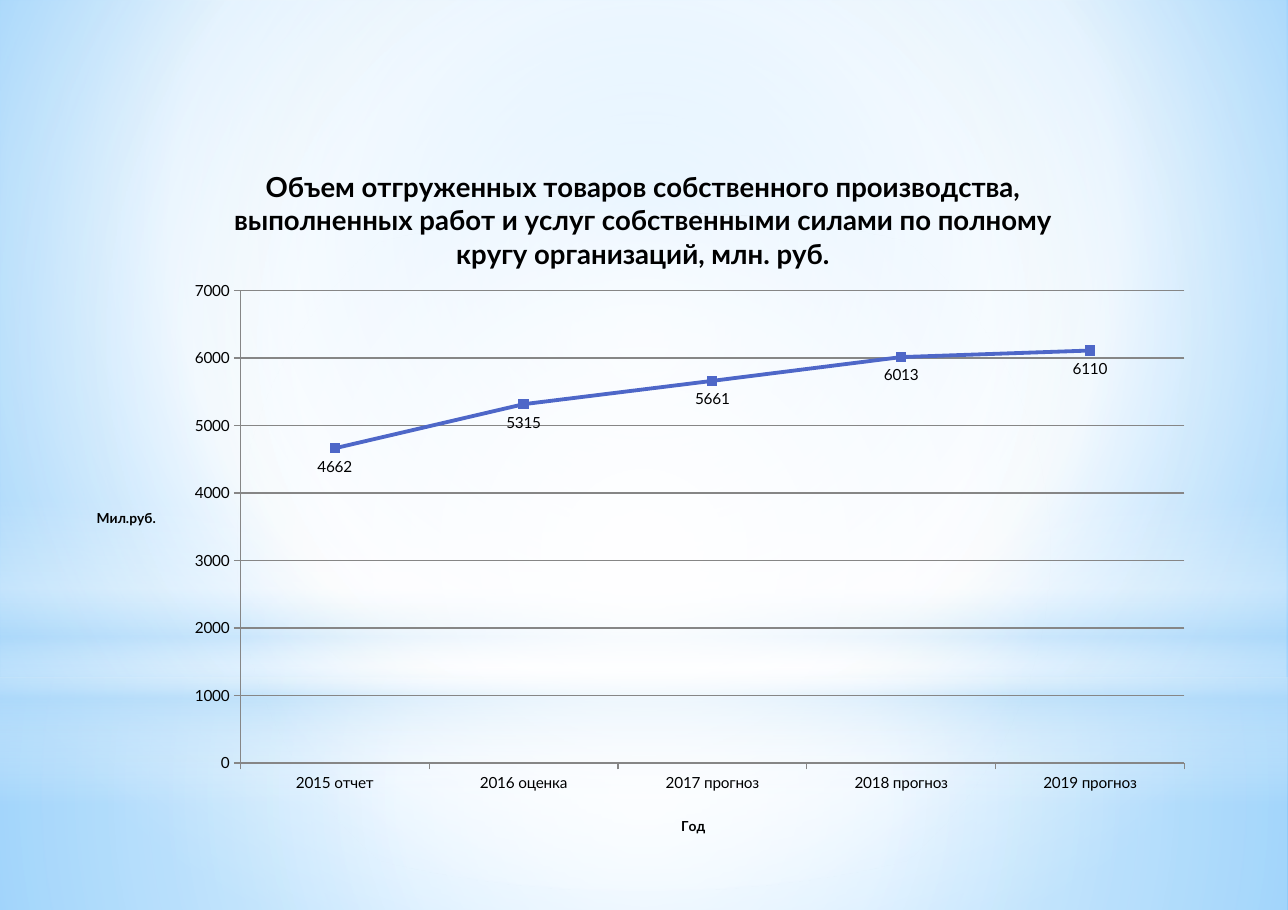
from dataclasses import dataclass

from lxml.etree import SubElement
from pptx import Presentation
from pptx.chart.data import CategoryChartData
from pptx.dml.color import RGBColor
from pptx.enum.chart import XL_CHART_TYPE, XL_LABEL_POSITION, XL_MARKER_STYLE, XL_TICK_MARK
from pptx.enum.shapes import MSO_SHAPE
from pptx.oxml import parse_xml
from pptx.oxml.ns import nsdecls, qn
from pptx.util import Emu, Pt

PX = 8298  # EMU per px
WIDTH, HEIGHT = 1288, 910
FONT = "Lato"
BLACK, BLUE, GREY = "000000", "4E67C8", "868686"
WHITE, PALE = "FFFFFF", "B4DCFA"


@dataclass
class Stop:
    pos: int
    color: str
    alpha: int = 100


@dataclass
class Gradient:
    stops: list[Stop]
    center: tuple[int, int, int, int] | None = (50, 50, 50, 50)  # None: top to bottom


@dataclass
class Glow:
    shape: MSO_SHAPE
    top: int
    height: int
    gradient: Gradient


BACKGROUND = Gradient([Stop(0, "9ED5FF"), Stop(60, WHITE), Stop(100, "5BB9FF")], (20, 10, 20, 60))
GLOWS = [
    Glow(MSO_SHAPE.RECTANGLE, 678, 232,
         Gradient([Stop(0, WHITE, 91), Stop(37, WHITE, 76), Stop(100, PALE, 79)])),
    Glow(MSO_SHAPE.RECTANGLE, 0, 678,
         Gradient([Stop(0, WHITE, 89), Stop(48, WHITE, 62), Stop(100, PALE, 79)])),
    Glow(MSO_SHAPE.RECTANGLE, 500, 303,
         Gradient([Stop(0, WHITE, 0), Stop(29, WHITE, 30), Stop(45, PALE, 40),
                   Stop(55, WHITE, 26), Stop(65, PALE, 60), Stop(100, WHITE, 0)], None)),
    Glow(MSO_SHAPE.OVAL, 213, 678, Gradient([Stop(0, WHITE), Stop(56, WHITE, 0)])),
]
VOLUMES = {
    "2015 отчет": 4662,
    "2016 оценка": 5315,
    "2017 прогноз": 5661,
    "2018 прогноз": 6013,
    "2019 прогноз": 6110,
}
TITLE = ("Объем отгруженных товаров собственного производства, выполненных работ "
         "и услуг собственными силами по полному кругу организаций, млн. руб.")


def px(n: int) -> Emu:
    return Emu(n * PX)


def rgb(color: str) -> RGBColor:
    return RGBColor.from_string(color)


def apply_gradient(parent, gradient: Gradient) -> None:
    """Put a gradient in the place of the solid fill of parent."""
    stops = "".join(
        f'<a:gs pos="{st.pos * 1000}"><a:srgbClr val="{st.color}">'
        f'<a:alpha val="{st.alpha * 1000}"/></a:srgbClr></a:gs>' for st in gradient.stops)
    if gradient.center:
        sides = " ".join(f'{k}="{v * 1000}"' for k, v in zip("ltrb", gradient.center))
        course = f'<a:path path="circle"><a:fillToRect {sides}/></a:path>'
    else:
        course = '<a:lin ang="5400000" scaled="0"/>'
    solid = parent.find(qn("a:solidFill"))
    parent.replace(solid, parse_xml(
        f'<a:gradFill {nsdecls("a")} rotWithShape="1"><a:gsLst>{stops}</a:gsLst>{course}</a:gradFill>'))


def add_glow(s, glow: Glow) -> None:
    sp = s.shapes.add_shape(glow.shape, 0, px(glow.top), px(WIDTH), px(glow.height))
    sp.shadow.inherit = False
    sp.line.fill.background()
    sp.fill.solid()
    apply_gradient(sp.element.spPr, glow.gradient)


def set_layout(element, **values: float | str) -> None:
    """Fix the place of a chart part, as fractions of the chart."""
    layout = element.find(qn("c:layout"))
    if layout is None:
        layout = parse_xml(f'<c:layout {nsdecls("c")}/>')
        element.insert(0, layout)
    manual = SubElement(layout, qn("c:manualLayout"))
    for name, value in values.items():
        SubElement(manual, qn(f"c:{name}")).set("val", str(value))


def set_title(title, text: str, size: int, x: float, y: float) -> None:
    tf = title.text_frame
    tf.text = text
    font = tf.paragraphs[0].font
    font.name, font.size, font.bold = FONT, Pt(size), True
    font.color.rgb = rgb(BLACK)
    title.element.find(".//" + qn("a:bodyPr")).set("rot", "0")
    set_layout(title.element, xMode="edge", yMode="edge", x=x, y=y)


def style_line(line, color: str, width: float) -> None:
    line.color.rgb = rgb(color)
    line.width = Pt(width)


def add_volume_chart(s) -> None:
    data = CategoryChartData(number_format="0")
    data.categories = list(VOLUMES)
    data.add_series("Series 1", list(VOLUMES.values()))
    chart = s.shapes.add_chart(
        XL_CHART_TYPE.LINE_MARKERS, px(83), px(133), px(1124), px(716), data).chart
    chart.has_legend = False
    chart.font.name, chart.font.size = FONT, Pt(10)
    chart.font.color.rgb = rgb(BLACK)

    # Titles and plot area
    set_title(chart.chart_title, TITLE, 18, 0.13, 0.04)
    set_title(chart.category_axis.axis_title, "Год", 9, 0.53, 0.95)
    set_title(chart.value_axis.axis_title, "Мил.руб.", 9, 0.01, 0.52)
    set_layout(chart.element.find(".//" + qn("c:plotArea")), layoutTarget="inner",
               xMode="edge", yMode="edge", x=0.14, y=0.22, w=0.84, h=0.66)

    # Axes
    for axis in (chart.category_axis, chart.value_axis):
        axis.major_tick_mark = XL_TICK_MARK.OUTSIDE
        axis.minor_tick_mark = XL_TICK_MARK.NONE
        style_line(axis.format.line, GREY, 0.75)
    values = chart.value_axis
    values.minimum_scale, values.maximum_scale, values.major_unit = 0, 7000, 1000
    values.tick_labels.number_format = "0"
    values.tick_labels.number_format_is_linked = False
    values.has_major_gridlines = True
    style_line(values.major_gridlines.format.line, GREY, 0.75)

    # Line, markers and labels
    plot = chart.plots[0]
    plot.vary_by_categories = False
    series = plot.series[0]
    series.smooth = False
    style_line(series.format.line, BLUE, 2.5)
    series.marker.style, series.marker.size = XL_MARKER_STYLE.SQUARE, 6
    series.marker.format.fill.solid()
    series.marker.format.fill.fore_color.rgb = rgb(BLUE)
    style_line(series.marker.format.line, BLUE, 0.75)
    labels = series.data_labels
    labels.show_value = True
    labels.position = XL_LABEL_POSITION.BELOW
    labels.number_format = "0"
    labels.number_format_is_linked = False


def main() -> None:
    prs = Presentation()
    prs.slide_width, prs.slide_height = px(WIDTH), px(HEIGHT)
    s = prs.slides.add_slide(prs.slide_layouts[6])

    # Background
    s.background.fill.solid()
    apply_gradient(s.element.find(".//" + qn("p:bgPr")), BACKGROUND)
    for glow in GLOWS:
        add_glow(s, glow)

    add_volume_chart(s)
    prs.save("out.pptx")


if __name__ == "__main__":
    main()
